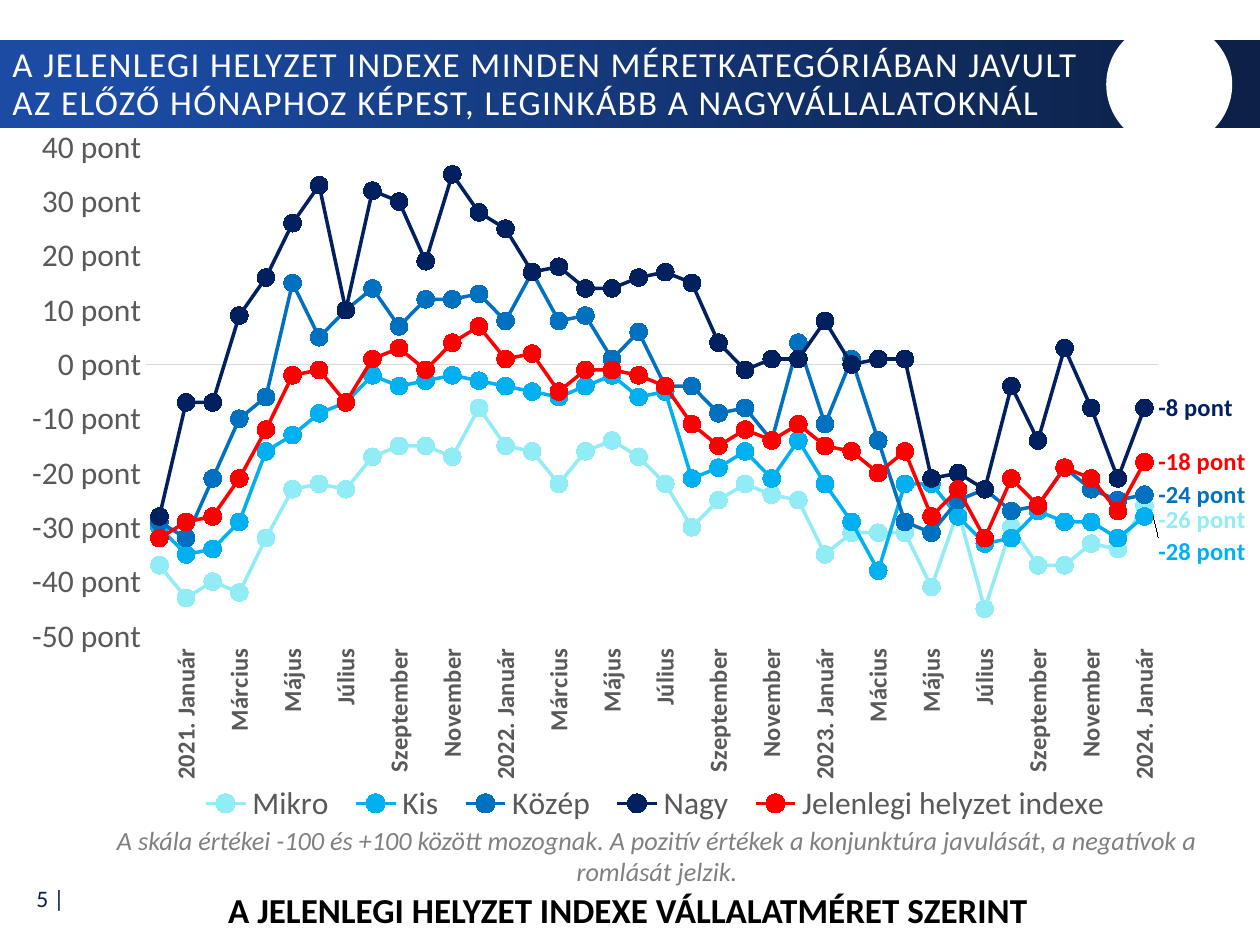
from dataclasses import dataclass

import pptx
import pptx.chart.data
import pptx.dml.color
import pptx.enum.chart
import pptx.enum.shapes
import pptx.enum.text
import pptx.oxml
import pptx.oxml.ns
import pptx.util

Inches = pptx.util.Inches
Pt = pptx.util.Pt
PONT = 'General\\ "pont"'
GREY = "595959"
CHART_NS = pptx.oxml.ns.nsdecls("c")


@dataclass
class Text:
    text: str
    box: tuple
    size: float
    color: str
    align: str = "LEFT"
    anchor: str = "TOP"
    bold: bool = False
    italic: bool = False
    line_spacing: float = 1.0
    tracking: int = 0


@dataclass
class Line:
    name: str
    color: str
    values: tuple
    label_drop: float = 0.0


TEXTS = [
    Text("5 |", (0.01, 6.94, 0.6, 0.37), 13.5, "0C2148", "RIGHT", "MIDDLE"),
    Text("A JELENLEGI HELYZET INDEXE MINDEN MÉRETKATEGÓRIÁBAN JAVULT "
         "AZ ELŐZŐ HÓNAPHOZ KÉPEST, LEGINKÁBB A NAGYVÁLLALATOKNÁL",
         (0, 0.34, 8.81, 0.67), 20, "FFFFFF", anchor="MIDDLE",
         line_spacing=0.9, tracking=80),
    Text("A skála értékei -100 és +100 között mozognak. A pozitív értékek a "
         "konjunktúra javulását, a negatívok a romlását jelzik.",
         (0.65, 6.49, 9.13, 0.61), 15, "808080", "CENTER", italic=True),
    Text("A JELENLEGI HELYZET INDEXE VÁLLALATMÉRET SZERINT",
         (0, 7, 9.97, 0.44), 20, "000000", "CENTER", bold=True),
]

MONTHS = ["2021. Január", "Március", "Május", "Július", "Szeptember", "November",
          "2022. Január", "Március", "Május", "Július", "Szeptember", "November",
          "2023. Január", "Mácius", "Május", "Július", "Szeptember", "November",
          "2024. Január"]

LINES = [
    Line("Mikro", "92ECF6", (
        -37, -43, -40, -42, -32, -23, -22, -23, -17, -15, -15, -17, -8,
        -15, -16, -22, -16, -14, -17, -22, -30, -25, -22, -24, -25,
        -35, -31, -31, -31, -41, -27, -45, -30, -37, -37, -33, -34, -26), 0.02),
    Line("Kis", "00B0F0", (
        -30, -35, -34, -29, -16, -13, -9, -7, -2, -4, -3, -2, -3,
        -4, -5, -6, -4, -2, -6, -5, -21, -19, -16, -21, -14,
        -22, -29, -38, -22, -22, -28, -33, -32, -27, -29, -29, -32, -28), 0.05),
    Line("Közép", "0070C0", (
        -29, -32, -21, -10, -6, 15, 5, 10, 14, 7, 12, 12, 13,
        8, 17, 8, 9, 1, 6, -4, -4, -9, -8, -14, 4,
        -11, 1, -14, -29, -31, -25, -23, -27, -26, -19, -23, -25, -24)),
    Line("Nagy", "002060", (
        -28, -7, -7, 9, 16, 26, 33, 10, 32, 30, 19, 35, 28,
        25, 17, 18, 14, 14, 16, 17, 15, 4, -1, 1, 1,
        8, 0, 1, 1, -21, -20, -23, -4, -14, 3, -8, -21, -8)),
    Line("Jelenlegi helyzet indexe", "FF0000", (
        -32, -29, -28, -21, -12, -2, -1, -7, 1, 3, -1, 4, 7,
        1, 2, -5, -1, -1, -2, -4, -11, -15, -12, -14, -11,
        -15, -16, -20, -16, -28, -23, -32, -21, -26, -19, -21, -27, -18)),
]


def rgb(value: str):
    return pptx.dml.color.RGBColor.from_string(value)


def set_all(obj, formats: dict) -> None:
    for name, value in formats.items():
        setattr(obj, name, value)


def set_font(font, size: float, color: str, bold=False, italic=False) -> None:
    set_all(font, {"name": "Calibri", "size": Pt(size), "bold": bold, "italic": italic})
    font.color.rgb = rgb(color)


def add_text(s, item: Text) -> None:
    tf = s.shapes.add_textbox(*map(Inches, item.box)).text_frame
    set_all(tf, {"word_wrap": True,
                 "vertical_anchor": pptx.enum.text.MSO_ANCHOR[item.anchor]})
    p = tf.paragraphs[0]
    set_all(p, {"alignment": pptx.enum.text.PP_ALIGN[item.align],
                "line_spacing": item.line_spacing})
    r = p.add_run()
    r.text = item.text
    set_font(r.font, item.size, item.color, item.bold, item.italic)
    if item.tracking:
        r.font._element.set("spc", str(item.tracking))


def add_shape(s, kind: str, box: tuple):
    sp = s.shapes.add_shape(pptx.enum.shapes.MSO_SHAPE[kind], *map(Inches, box))
    sp.shadow.inherit = False
    sp.line.fill.background()
    return sp


def add_banner(s) -> None:
    fill = add_shape(s, "RECTANGLE", (0, 0.32, 10, 0.7)).fill
    fill.gradient()
    fill.gradient_angle = 0
    for stop, position, color in zip(fill.gradient_stops, (0.09, 0.95), ("1B4BA3", "0C2148")):
        stop.position = position
        stop.color.rgb = rgb(color)
    fill = add_shape(s, "OVAL", (8.78, 0.17, 1, 1)).fill
    fill.solid()
    fill.fore_color.rgb = rgb("FFFFFF")


def layout_xml(**values):
    body = "".join(f'<c:{name} val="{value}"/>' for name, value in values.items())
    return pptx.oxml.parse_xml(
        f"<c:layout {CHART_NS}><c:manualLayout>{body}</c:manualLayout></c:layout>")


def replace_layout(parent, index: int, **values) -> None:
    for old in parent.xpath("c:layout"):
        parent.remove(old)
    parent.insert(index, layout_xml(**values))


def style_line(series, line: Line) -> None:
    series.smooth = False
    series.format.line.width = Pt(2)
    series.format.line.color.rgb = rgb(line.color)
    marker = series.marker
    set_all(marker, {"style": pptx.enum.chart.XL_MARKER_STYLE.CIRCLE, "size": 10})
    marker.format.fill.solid()
    marker.format.fill.fore_color.rgb = rgb(line.color)
    marker.format.line.color.rgb = rgb(line.color)
    last = len(line.values) - 1
    label = series.points[last].data_label
    set_font(label.font, 14, line.color, bold=True)
    label.position = pptx.enum.chart.XL_LABEL_POSITION.RIGHT
    idx = series._element.xpath("c:dLbls/c:dLbl/c:idx")[0]
    idx.addnext(pptx.oxml.parse_xml(
        f"<c:numFmt {CHART_NS} formatCode='{PONT}' sourceLinked='0'/>"))
    if line.label_drop:
        idx.addnext(layout_xml(x=0, y=line.label_drop))


def style_axes(chart) -> None:
    none = pptx.enum.chart.XL_TICK_MARK.NONE
    cat, val = chart.category_axis, chart.value_axis
    for axis in (cat, val):
        set_all(axis, {"major_tick_mark": none, "minor_tick_mark": none,
                       "has_major_gridlines": False})
    cat.tick_label_position = pptx.enum.chart.XL_TICK_LABEL_POSITION.LOW
    cat.format.line.color.rgb = rgb("D9D9D9")
    cat.format.line.width = Pt(0.75)
    set_font(cat.tick_labels.font, 14, GREY, bold=True)
    body = cat._element.xpath("c:txPr/a:bodyPr")[0]
    body.set("rot", "-5400000")
    body.set("vert", "horz")
    cat._element.xpath("c:noMultiLvlLbl")[0].addprevious(
        pptx.oxml.parse_xml(f'<c:tickLblSkip {CHART_NS} val="1"/>'))
    set_all(val, {"minimum_scale": -50, "maximum_scale": 40, "major_unit": 10})
    set_all(val.tick_labels, {"number_format": PONT, "number_format_is_linked": False})
    set_font(val.tick_labels.font, 18, GREY)
    val.format.line.fill.background()


def add_line_chart(s) -> None:
    data = pptx.chart.data.CategoryChartData(number_format=PONT)
    data.categories = [name for month in MONTHS for name in ("", month)]
    for line in LINES:
        data.add_series(line.name, line.values)
    chart = s.shapes.add_chart(pptx.enum.chart.XL_CHART_TYPE.LINE_MARKERS,
                               *map(Inches, (0, 1.01, 10, 5.68)), data).chart
    set_font(chart.font, 18, "000000")
    set_all(chart, {"has_title": False, "has_legend": True})
    set_all(chart.legend, {"position": pptx.enum.chart.XL_LEGEND_POSITION.BOTTOM,
                           "include_in_layout": False})
    set_font(chart.legend.font, 18, GREY)
    chart.plots[0].vary_by_categories = False
    style_axes(chart)
    for series, line in zip(chart.plots[0].series, LINES):
        style_line(series, line)
    replace_layout(chart._chartSpace.xpath("c:chart/c:plotArea")[0], 0,
                   layoutTarget="inner", xMode="edge", yMode="edge",
                   x=0.116, y=0.028, w=0.803, h=0.683)
    replace_layout(chart.legend._element, 1, xMode="edge", yMode="edge",
                   x=0.15, y=0.91, w=0.74, h=0.07)


def main() -> None:
    prs = pptx.Presentation()
    set_all(prs, {"slide_width": Inches(10), "slide_height": Inches(7.5)})
    s = prs.slides.add_slide(prs.slide_layouts[6])
    add_banner(s)
    for item in TEXTS:
        add_text(s, item)
    add_line_chart(s)
    prs.save("out.pptx")


if __name__ == "__main__":
    main()
